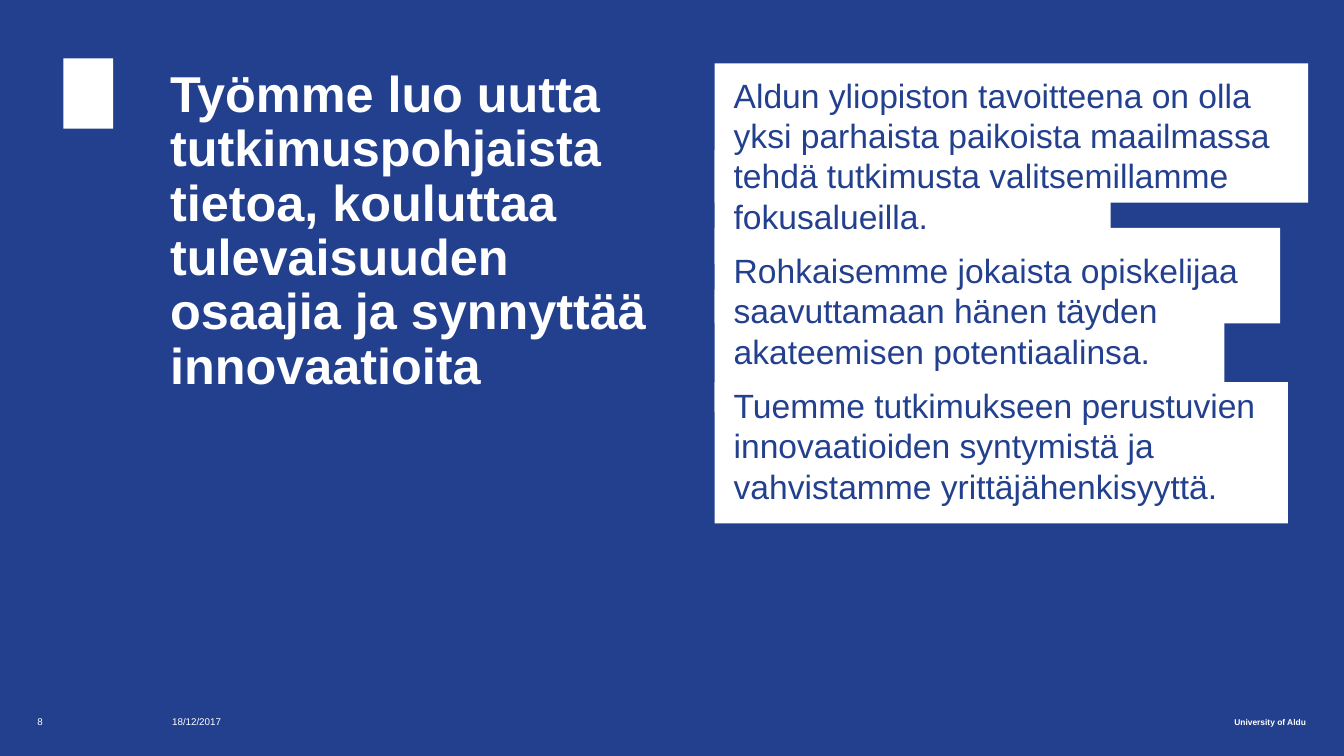
"""Builds a blue slide with a headline and three statements on white blocks."""
from pptx import Presentation
from pptx.dml.color import RGBColor
from pptx.enum.shapes import MSO_SHAPE
from pptx.enum.text import MSO_ANCHOR, PP_ALIGN
from pptx.util import Cm, Pt

RECT = MSO_SHAPE.RECTANGLE
TOP, MIDDLE = MSO_ANCHOR.TOP, MSO_ANCHOR.MIDDLE
LEFT, RIGHT = PP_ALIGN.LEFT, PP_ALIGN.RIGHT
COLORS = {"blue": "23408F", "white": "FFFFFF"}

prs = Presentation()
prs.slide_width, prs.slide_height = Cm(33.87), Cm(19.05)
s = prs.slides.add_slide(prs.slide_layouts[6])
s.background.fill.solid()
s.background.fill.fore_color.rgb = RGBColor.from_string(COLORS["blue"])


def add_text(paragraphs, box, size, color="white", bold=False, align=LEFT,
             anchor=TOP, inset=(0.25, 0.13), spacing=None, after=0):
    tf = s.shapes.add_textbox(*map(Cm, box)).text_frame
    tf.word_wrap = True
    tf.vertical_anchor = anchor
    tf.margin_left = tf.margin_right = Cm(inset[0])
    tf.margin_top = tf.margin_bottom = Cm(inset[1])
    for i, text in enumerate(paragraphs):
        p = tf.add_paragraph() if i else tf.paragraphs[0]
        p.text = text
        p.alignment = align
        p.space_after = Pt(after)
        if spacing:
            p.line_spacing = spacing
        for r in p.runs:
            r.font.name = "Arial"
            r.font.size = Pt(size)
            r.font.bold = bold
            r.font.color.rgb = RGBColor.from_string(COLORS[color])


emblem = (1.6, 1.47, 1.25, 1.77)
block_left = 18.01
blocks = [(1.6, 14.96, 3.51), (3.78, 9.98, 2.87), (5.74, 14.25, 2.41),
          (9.63, 14.45, 3.56), (7.29, 12.85, 3.1)]
for box in [emblem] + [(block_left, *block) for block in blocks]:
    sp = s.shapes.add_shape(RECT, *map(Cm, box))
    sp.shadow.inherit = False
    sp.fill.solid()
    sp.fill.fore_color.rgb = RGBColor.from_string(COLORS["white"])
    sp.line.fill.background()

add_text(["Työmme luo uutta tutkimuspohjaista tietoa, kouluttaa tulevaisuuden "
          "osaajia ja synnyttää innovaatioita"],
         (4.04, 1.6, 12.6, 9.91), 36, bold=True, spacing=0.9)
add_text(["Aldun yliopiston tavoitteena on olla\n"
          "yksi parhaista paikoista maailmassa\n"
          "tehdä tutkimusta valitsemillamme fokusalueilla.",
          "Rohkaisemme jokaista opiskelijaa saavuttamaan hänen täyden "
          "akateemisen potentiaalinsa.",
          "Tuemme tutkimukseen perustuvien innovaatioiden syntymistä ja "
          "vahvistamme yrittäjähenkisyyttä."],
         (18.24, 1.75, 15.8, 15.93), 24, color="blue", after=10)

footers = [("8", 0.94, 1.07, 7, False, LEFT),
           ("18/12/2017", 4.34, 1.83, 7, False, LEFT),
           ("University of Aldu", 26.97, 5.94, 6, True, RIGHT)]
for text, left, width, size, bold, align in footers:
    add_text([text], (left, 17.88, width, 0.61), size, bold=bold, align=align,
             anchor=MIDDLE, inset=(0, 0))

prs.save("out.pptx")
